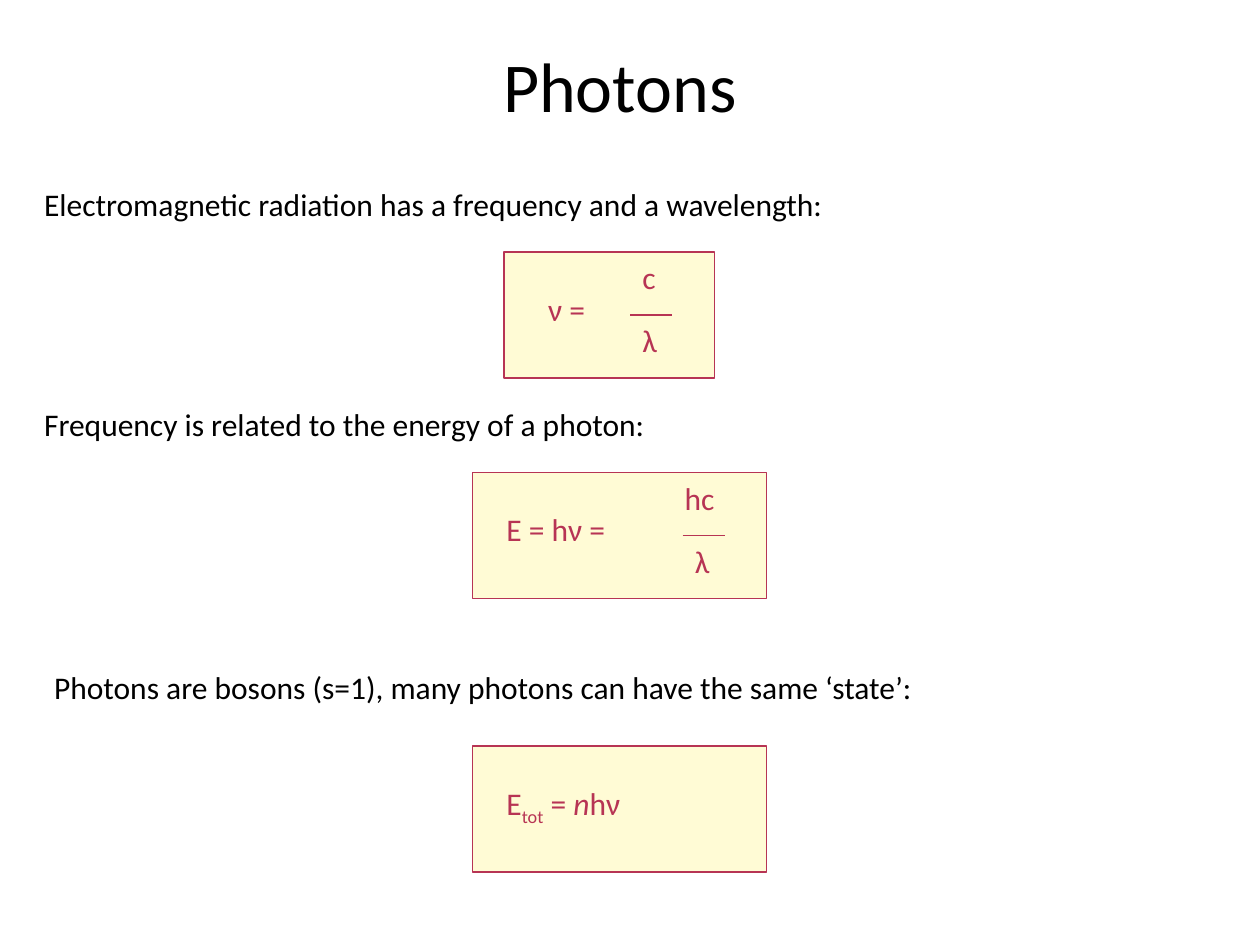
from lxml.etree import SubElement
from pptx import Presentation
from pptx.dml.color import RGBColor
from pptx.enum.shapes import MSO_CONNECTOR, MSO_SHAPE
from pptx.enum.text import MSO_ANCHOR, PP_ALIGN
from pptx.oxml.ns import qn
from pptx.util import Cm, Pt

BLACK = RGBColor(0x00, 0x00, 0x00)
CRIMSON = RGBColor(0xB7, 0x34, 0x54)
CREAM = RGBColor(0xFF, 0xFB, 0xD5)
FONT = "Calibri"
LINE_WIDTH = Pt(0.75)
TEXT_HEIGHT = 1.27
BOX_HEIGHT = 2.54


def add_text(slide, left, top, width, *parts, color=BLACK, italic=(), subscript=()):
    box = slide.shapes.add_textbox(Cm(left), Cm(top), Cm(width), Cm(TEXT_HEIGHT))
    box.text_frame.word_wrap = True
    paragraph = box.text_frame.paragraphs[0]
    for part in parts:
        run = paragraph.add_run()
        run.text = part
        run.font.name = FONT
        run.font.size = Pt(18)
        run.font.color.rgb = color
        if part in italic:
            run.font.italic = True
        if part in subscript:
            run._r.get_or_add_rPr().set("baseline", "-25000")


presentation = Presentation()
presentation.slide_width = Cm(25.4)
presentation.slide_height = Cm(19.05)
slide = presentation.slides.add_slide(presentation.slide_layouts[5])

title = slide.shapes.title
title.left, title.top, title.width, title.height = Cm(1.7), Cm(0.43), Cm(21.59), Cm(2.54)
title.text_frame.text = "Photons"
title.text_frame.vertical_anchor = MSO_ANCHOR.MIDDLE
paragraph = title.text_frame.paragraphs[0]
paragraph.alignment = PP_ALIGN.CENTER
paragraph.font.name = FONT
paragraph.font.size = Pt(40)
paragraph.font.color.rgb = BLACK

statements = [
    (0.64, 3.6, "Electromagnetic radiation has a frequency and a wavelength:"),
    (0.64, 8.05, "Frequency is related to the energy of a photon:"),
    (0.84, 13.34, "Photons are bosons (s=1), many photons can have the same ‘state’:"),
]
for left, top, statement in statements:
    add_text(slide, left, top, 23.5, statement)

formulas = [
    (10.16, 5.08, 4.24, 10.8, ["ν ="]),
    (9.53, 9.53, 5.92, 9.96, ["E = hν ="]),
    (9.53, 15.04, 5.92, 9.96, ["E", "tot", " = ", "n", "hν"]),
]
for left, top, width, text_left, parts in formulas:
    box = slide.shapes.add_shape(
        MSO_SHAPE.RECTANGLE, Cm(left), Cm(top), Cm(width), Cm(BOX_HEIGHT)
    )
    box.shadow.inherit = False
    box.fill.solid()
    box.fill.fore_color.rgb = CREAM
    box.line.color.rgb = CRIMSON
    box.line.width = LINE_WIDTH
    add_text(slide, text_left, top + BOX_HEIGHT / 4, 5.08, *parts,
             color=CRIMSON, italic=["n"], subscript=["tot"])

fractions = [
    (12.7, 5.08, "c", 12.7),
    (13.76, 9.53, "hc", 13.55),
]
for left, top, numerator, numerator_left in fractions:
    middle = top + BOX_HEIGHT / 2
    add_text(slide, numerator_left, top, 1.48, numerator, color=CRIMSON)
    add_text(slide, left, middle, 1.27, "λ", color=CRIMSON)
    bar = slide.shapes.add_connector(
        MSO_CONNECTOR.STRAIGHT, Cm(left), Cm(middle), Cm(left + 0.85), Cm(middle)
    )
    bar.line.color.rgb = CRIMSON
    bar.line.width = LINE_WIDTH
    SubElement(bar._element.spPr, qn("a:effectLst"))

presentation.save("out.pptx")
